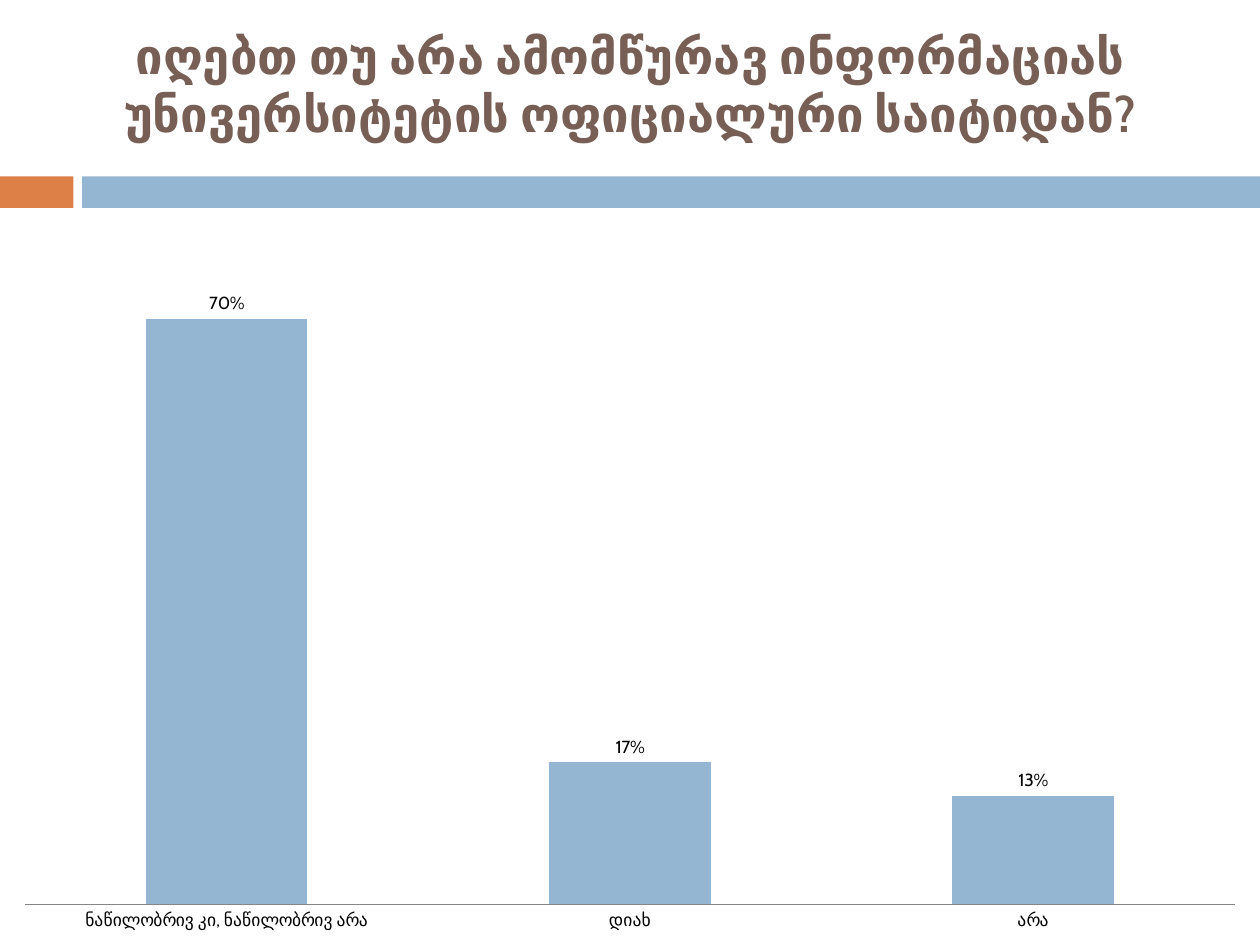
from pptx import Presentation
from pptx.chart.data import CategoryChartData
from pptx.dml.color import RGBColor
from pptx.enum import chart as chart_enum, shapes, text
from pptx.util import Pt

COLORS = {
    "accent": "DD8047",
    "blue": "94B6D2",
    "title": "775F55",
    "text": "000000",
    "axis": "868686",
}
FONT = "Cabin"
ANSWERS = {"ნაწილობრივ კი, ნაწილობრივ არა": 0.7, "დიახ": 0.17, "არა": 0.13}


def color(name):
    return RGBColor.from_string(COLORS[name])


def format_font(font, size, fill, bold=False):
    font.name = FONT
    font.size = Pt(size)
    font.bold = bold
    font.color.rgb = color(fill)


def write_text(text_frame, content, *, size, fill, bold=False, align=text.PP_ALIGN.LEFT):
    paragraph = text_frame.paragraphs[0]
    paragraph.alignment = align
    run = paragraph.add_run()
    run.text = content
    format_font(run.font, size, fill, bold)


def add_title(slide, content, left, top, width, height):
    title = slide.shapes.title
    title.left, title.top, title.width, title.height = map(Pt, (left, top, width, height))
    title.text_frame.word_wrap = True
    title.text_frame.vertical_anchor = text.MSO_ANCHOR.MIDDLE
    write_text(title.text_frame, content, size=28, fill="title", bold=True,
               align=text.PP_ALIGN.CENTER)


def add_band(slide, left, top, width, height, accent_width=42, gap=5):
    """Draw the short accent block and the long bar to its right."""
    bar_offset = accent_width + gap
    parts = [(0, accent_width, "accent"), (bar_offset, width - bar_offset, "blue")]
    for offset, part_width, fill in parts:
        shape = slide.shapes.add_shape(shapes.MSO_SHAPE.RECTANGLE, Pt(left + offset),
                                       Pt(top), Pt(part_width), Pt(height))
        shape.shadow.inherit = False
        shape.fill.solid()
        shape.fill.fore_color.rgb = color(fill)
        shape.line.fill.background()


def add_answer_chart(slide, answers, left, top, width, height):
    data = CategoryChartData(number_format="0%")
    data.categories = list(answers)
    data.add_series("Series 1", list(answers.values()))
    chart = slide.shapes.add_chart(chart_enum.XL_CHART_TYPE.COLUMN_CLUSTERED, Pt(left),
                                   Pt(top), Pt(width), Pt(height), data).chart
    chart.has_legend = False
    chart.has_title = False
    format_font(chart.font, 10, "text")

    value_axis = chart.value_axis
    value_axis.minimum_scale, value_axis.maximum_scale = 0, 0.8
    value_axis.has_major_gridlines = False
    value_axis.tick_labels.number_format = "0%"
    value_axis.tick_labels.number_format_is_linked = False
    value_axis.visible = False

    category_axis = chart.category_axis
    category_axis.major_tick_mark = chart_enum.XL_TICK_MARK.NONE
    category_axis.format.line.color.rgb = color("axis")
    category_axis.format.line.width = Pt(0.75)

    plot = chart.plots[0]
    plot.vary_by_categories = False
    plot.gap_width = 150
    plot.overlap = -25
    plot.has_data_labels = True
    labels = plot.data_labels
    labels.show_value = True
    labels.number_format = "0%"
    labels.number_format_is_linked = False
    labels.position = chart_enum.XL_LABEL_POSITION.OUTSIDE_END

    series_fill = plot.series[0].format.fill
    series_fill.solid()
    series_fill.fore_color.rgb = color("blue")


def main():
    presentation = Presentation()
    presentation.slide_width, presentation.slide_height = Pt(720), Pt(540)
    slide = presentation.slides.add_slide(presentation.slide_layouts[5])
    add_band(slide, 0, 100.8, 720, 18)
    add_title(slide, "იღებთ თუ არა ამომწურავ ინფორმაციას უნივერსიტეტის ოფიციალური საიტიდან?",
              0, 0, 720, 96)
    add_answer_chart(slide, ANSWERS, 0, 126, 720, 414)
    presentation.save("out.pptx")


if __name__ == "__main__":
    main()
